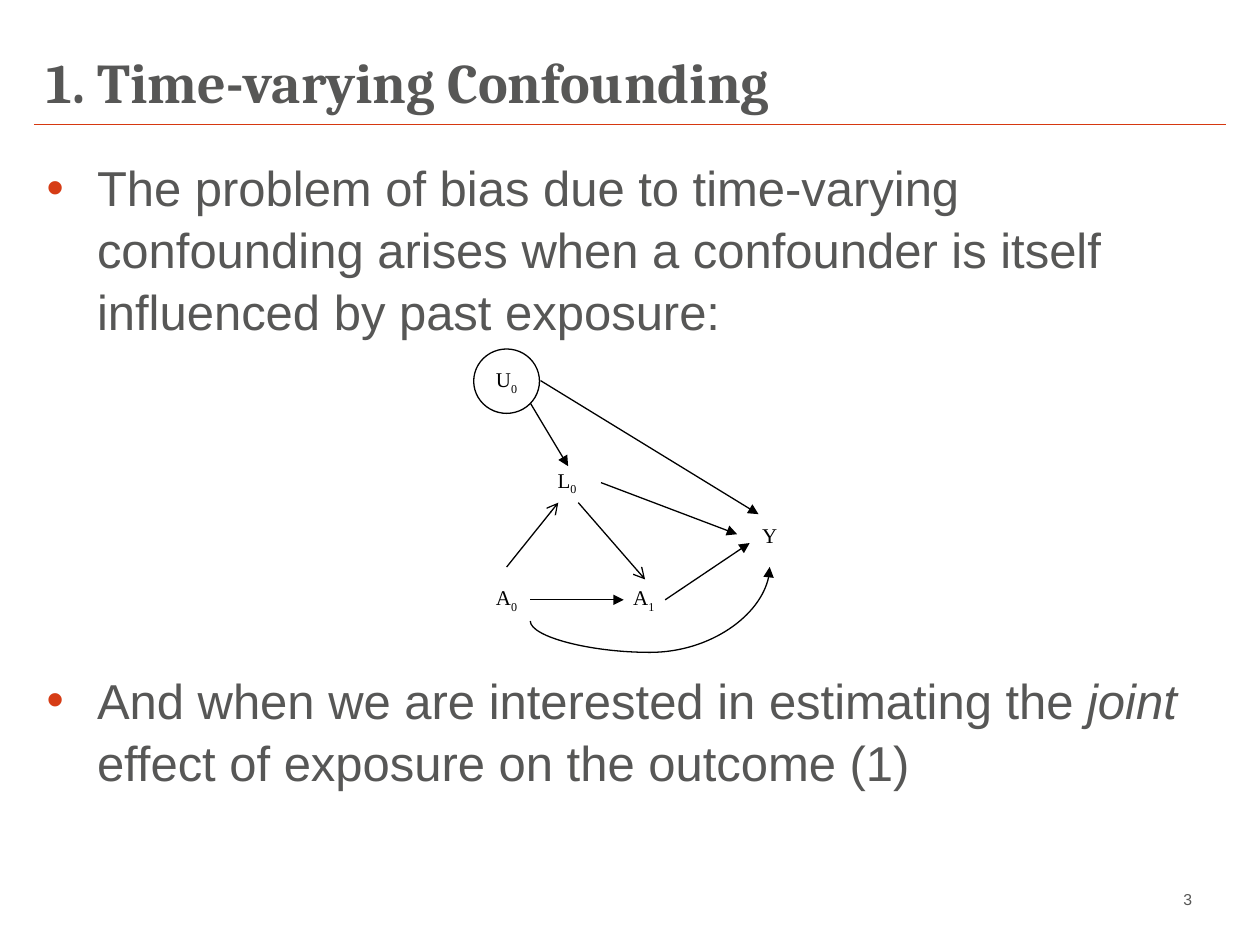
from lxml.etree import SubElement
from pptx import Presentation
from pptx.dml.color import RGBColor
from pptx.enum.shapes import MSO_CONNECTOR, MSO_SHAPE
from pptx.enum.text import MSO_ANCHOR, MSO_AUTO_SIZE, PP_ALIGN
from pptx.oxml.ns import qn
from pptx.util import Inches, Pt

WIDTH, HEIGHT = 10, 7.5
GREY, RED, BULLET_RED, BLACK = "575756", "D63810", "D63C15", "000000"

# Diagram places are percentages of the diagram's box
NODE_SIZE = (20, 21.2)
NODES = [  # letter, subscript, centre, outlined
    ("U", "0", (10, 10.6), True),
    ("A", "0", (10, 82.4), False),
    ("A", "1", (51.7, 82.4), False),
    ("L", "0", (28.4, 43.8), False),
    ("Y", "", (90, 61.2), False),
]
ARROWS = [  # start, end, head
    ((58.2, 82.6), (83.9, 63.9), "triangle"),
    ((10, 71.8), (25.7, 50.6), "arrow"),
    ((31.8, 50.6), (52.1, 75.9), "arrow"),
    ((17.2, 82.6), (45.6, 82.6), "triangle"),
    ((17.2, 17.8), (28.7, 38.6), "triangle"),
    ((20.3, 10.4), (86.6, 54.4), "triangle"),
    ((38.7, 44), (80.1, 61), "triangle"),
]
CURVE = ((17.2, 89.6), (90, 71.8))


def color(value):
    return RGBColor.from_string(value)


def add_text(paragraph, text, font="Arial", size=28, fill=GREY,
             bold=False, italic=False, baseline=None):
    run = paragraph.add_run()
    run.text = text
    run.font.name, run.font.size = font, Pt(size)
    run.font.bold, run.font.italic = bold, italic
    run.font.color.rgb = color(fill)
    if baseline:
        run.font._element.set("baseline", str(baseline * 1000))


def place(shape, box):
    shape.left, shape.top, shape.width, shape.height = map(Inches, box)


def add_line(slide, start, end, stroke=BLACK, head=None, kind=MSO_CONNECTOR.STRAIGHT):
    line = slide.shapes.add_connector(kind, *map(Inches, (*start, *end)))
    line.line.color.rgb = color(stroke)
    line.line.width = Pt(0.75)
    if head:
        SubElement(line.line._get_or_add_ln(), qn("a:tailEnd"), type=head)
    SubElement(line._element.spPr, qn("a:effectLst"))
    return line


def add_curve(slide, start, end, bulge):
    """Curve that leaves downwards and enters its end from below."""
    center_x, center_y = ((a + b) / 2 for a, b in zip(start, end))
    half_run, half_rise = (end[0] - start[0]) / 2, (start[1] - end[1]) / 2
    curve = add_line(slide, (center_x + half_rise, center_y + half_run),
                     (center_x - half_rise, center_y - half_run),
                     head="triangle", kind=MSO_CONNECTOR.CURVE)
    properties = curve._element.spPr
    properties.find(qn("a:xfrm")).set("rot", str(90 * 60000))
    adjustments = properties.find(qn("a:prstGeom")).get_or_add_avLst()
    SubElement(adjustments, qn("a:gd"), name="adj1", fmla=f"val {round(bulge * 100000)}")


def add_title(slide, box, text):
    title = slide.shapes.title
    place(title, box)
    title.text_frame.auto_size = MSO_AUTO_SIZE.NONE
    title.text_frame.vertical_anchor = MSO_ANCHOR.MIDDLE
    heading = title.text_frame.paragraphs[0]
    heading.alignment = PP_ALIGN.LEFT
    add_text(heading, text, font="Cambria", size=32, bold=True)
    # Rule under the title
    left, top, width, height = box
    add_line(slide, (left, top + height), (WIDTH - left, top + height), RED)


def add_points(slide, box, points, gap):
    body = slide.placeholders[1]
    place(body, box)
    frame = body.text_frame
    frame.auto_size = MSO_AUTO_SIZE.NONE
    frame.margin_top = Inches(0.08)
    for index, pieces in enumerate(points):
        point = frame.add_paragraph() if index else frame.paragraphs[0]
        point.space_before = Pt(gap if index else 0)
        point.line_spacing = 1.05
        layout = point._element.get_or_add_pPr()
        layout.set("marL", str(Inches(0.4)))
        layout.set("indent", str(-Inches(0.4)))
        SubElement(SubElement(layout, qn("a:buClr")), qn("a:srgbClr"), val=BULLET_RED)
        SubElement(layout, qn("a:buFont"), typeface="Arial")
        SubElement(layout, qn("a:buChar"), char="•")
        for text, italic in pieces:
            add_text(point, text, italic=italic)


def add_node(slide, box, letter, subscript, outlined):
    node = slide.shapes.add_shape(MSO_SHAPE.OVAL, *map(Inches, box))
    node.shadow.inherit = False
    node.fill.background()
    if outlined:
        node.line.color.rgb = color(BLACK)
        node.line.width = Pt(0.75)
    else:
        node.line.fill.background()
    frame = node.text_frame
    frame.margin_left = frame.margin_right = frame.margin_top = frame.margin_bottom = 0
    frame.vertical_anchor = MSO_ANCHOR.MIDDLE
    label = frame.paragraphs[0]
    label.alignment = PP_ALIGN.CENTER
    style = dict(font="Times New Roman", size=12, fill=BLACK)
    add_text(label, letter, **style)
    if subscript:
        add_text(label, subscript, baseline=-25, **style)


def add_causal_diagram(slide, box):
    left, top, width, height = box

    def at(point):
        return left + width * point[0] / 100, top + height * point[1] / 100

    node_width, node_height = width * NODE_SIZE[0] / 100, height * NODE_SIZE[1] / 100
    for letter, subscript, center, outlined in NODES:
        x, y = at(center)
        add_node(slide, (x - node_width / 2, y - node_height / 2, node_width, node_height),
                 letter, subscript, outlined)
    for start, end, head in ARROWS:
        add_line(slide, at(start), at(end), head=head)
    add_curve(slide, *map(at, CURVE), bulge=-0.58)


def add_page_number(slide, box, number):
    frame = slide.shapes.add_textbox(*map(Inches, box)).text_frame
    frame.word_wrap = True
    frame.vertical_anchor = MSO_ANCHOR.MIDDLE
    frame.paragraphs[0].alignment = PP_ALIGN.RIGHT
    add_text(frame.paragraphs[0], number, size=9)


def main():
    deck = Presentation()
    deck.slide_width, deck.slide_height = Inches(WIDTH), Inches(HEIGHT)
    slide = deck.slides.add_slide(deck.slide_layouts[1])
    margin = 0.27
    content_width = WIDTH - 2 * margin

    add_title(slide, (margin, 0.3, content_width, 0.69), "1. Time-varying Confounding")
    # The gap between the points leaves room for the diagram
    add_points(slide, (margin, 1.15, content_width, 5.36), [
        [("The problem of bias due to time-varying confounding arises when "
          "a confounder is itself influenced by past exposure:", False)],
        [("And when we are interested in estimating the ", False), ("joint", True),
         (" effect of exposure on the outcome (1)", False)],
    ], gap=187)
    add_causal_diagram(slide, (3.76, 2.77, 2.61, 2.41))
    add_page_number(slide, (7.99, 6.98, 1.57, 0.31), "3")
    deck.save("out.pptx")


if __name__ == "__main__":
    main()
